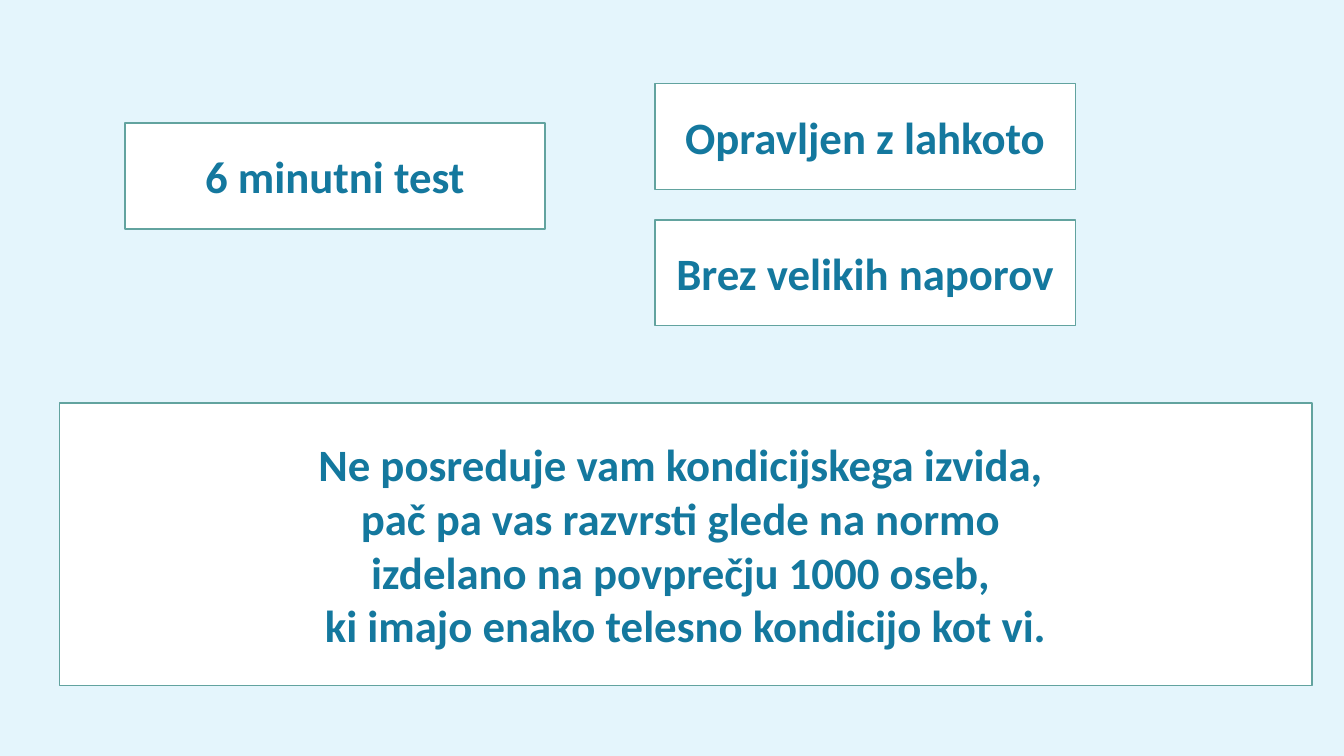
from dataclasses import dataclass

from pptx import Presentation
from pptx.dml.color import RGBColor
from pptx.enum.shapes import MSO_SHAPE
from pptx.enum.text import MSO_ANCHOR, MSO_AUTO_SIZE, PP_ALIGN
from pptx.util import Cm, Pt

RECTANGLE = MSO_SHAPE.RECTANGLE
MIDDLE = MSO_ANCHOR.MIDDLE
NO_AUTOFIT = MSO_AUTO_SIZE.NONE
CENTER = PP_ALIGN.CENTER
TITLE_ONLY_LAYOUT = 5


@dataclass(frozen=True)
class Theme:
    """Colours and type of the slide."""

    background: RGBColor = RGBColor(0xE4, 0xF5, 0xFC)
    box_fill: RGBColor = RGBColor(0xFF, 0xFF, 0xFF)
    box_line: RGBColor = RGBColor(0x62, 0xA3, 0x9F)
    text: RGBColor = RGBColor(0x14, 0x78, 0x9E)
    font: str = "Calibri"
    text_size: Pt = Pt(32)
    line_width: Pt = Pt(1)


THEME = Theme()
LABEL_SIZE = (Cm(10.59), Cm(2.67))
BENEFITS_LEFT, BENEFITS_TOP, BENEFITS_STEP = Cm(16.51), Cm(2.11), Cm(3.43)
BENEFITS = ("Opravljen z lahkoto", "Brez velikih naporov")
EXPLANATION = (
    "Ne posreduje vam kondicijskega izvida, ",
    "pač pa vas razvrsti glede na normo ",
    "izdelano na povprečju 1000 oseb, ",
    "ki imajo enako telesno kondicijo kot vi.",
)


def style_box(shape, text):
    """Give a shape the outlined white look and bold centred text."""
    shape.fill.solid()
    shape.fill.fore_color.rgb = THEME.box_fill
    shape.line.color.rgb = THEME.box_line
    shape.line.width = THEME.line_width
    text_frame = shape.text_frame
    text_frame.text = text
    text_frame.word_wrap = True
    text_frame.auto_size = NO_AUTOFIT
    text_frame.vertical_anchor = MIDDLE
    for paragraph in text_frame.paragraphs:
        paragraph.alignment = CENTER
        for run in paragraph.runs:
            run.font.name = THEME.font
            run.font.size = THEME.text_size
            run.font.bold = True
            run.font.color.rgb = THEME.text


def place_title(slide, text, left, top, width, height):
    """Move the title placeholder and style it as a box."""
    title = slide.shapes.title
    title.left, title.top, title.width, title.height = left, top, width, height
    style_box(title, text)


def add_box(slide, text, left, top, width, height):
    """Add a rectangle styled as a box."""
    shape = slide.shapes.add_shape(RECTANGLE, left, top, width, height)
    shape.shadow.inherit = False
    style_box(shape, text)


def main():
    """Build the slide and save it."""
    presentation = Presentation()
    presentation.slide_width, presentation.slide_height = Cm(33.87), Cm(19.05)
    layout = presentation.slide_layouts[TITLE_ONLY_LAYOUT]
    slide = presentation.slides.add_slide(layout)
    slide.background.fill.solid()
    slide.background.fill.fore_color.rgb = THEME.background

    place_title(slide, "6 minutni test", Cm(3.15), Cm(3.1), *LABEL_SIZE)
    for index, benefit in enumerate(BENEFITS):
        top = BENEFITS_TOP + index * BENEFITS_STEP
        add_box(slide, benefit, BENEFITS_LEFT, top, *LABEL_SIZE)
    add_box(slide, "\n".join(EXPLANATION), Cm(1.5), Cm(10.16), Cm(31.57), Cm(7.11))

    presentation.save("out.pptx")


if __name__ == "__main__":
    main()
